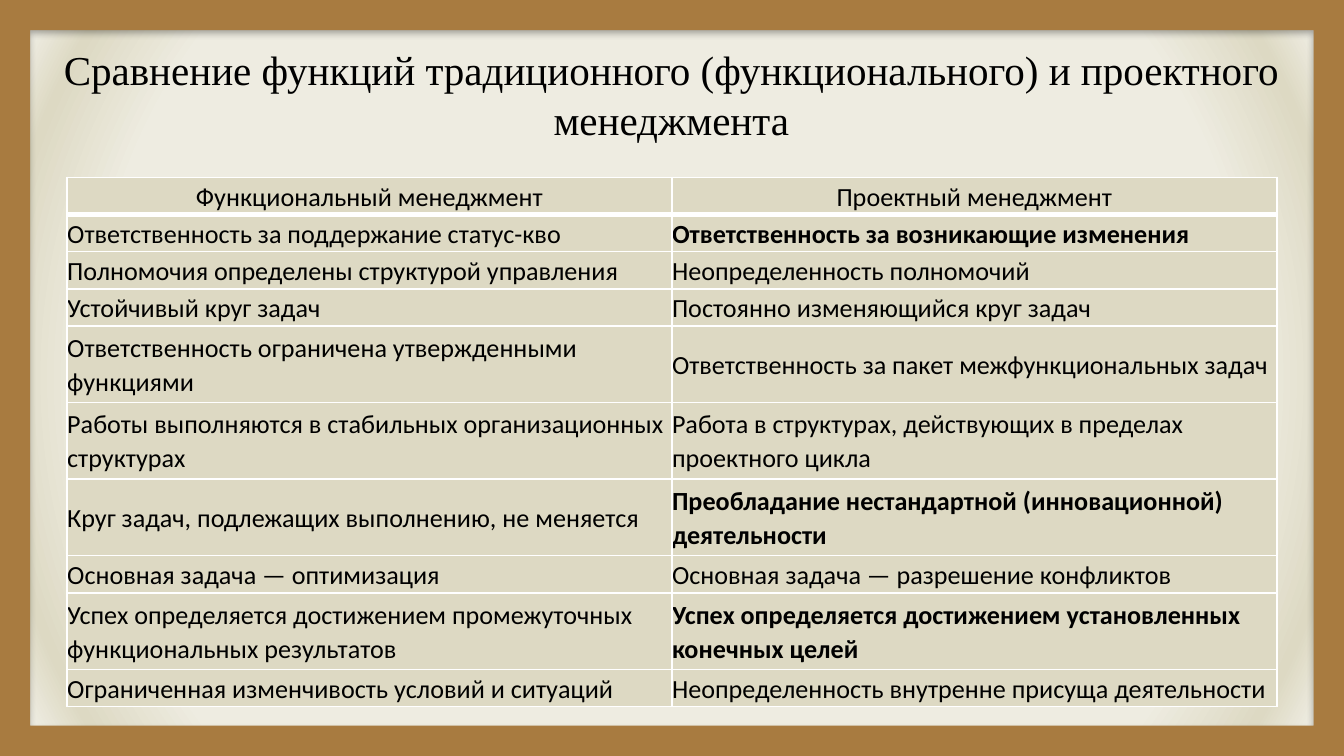
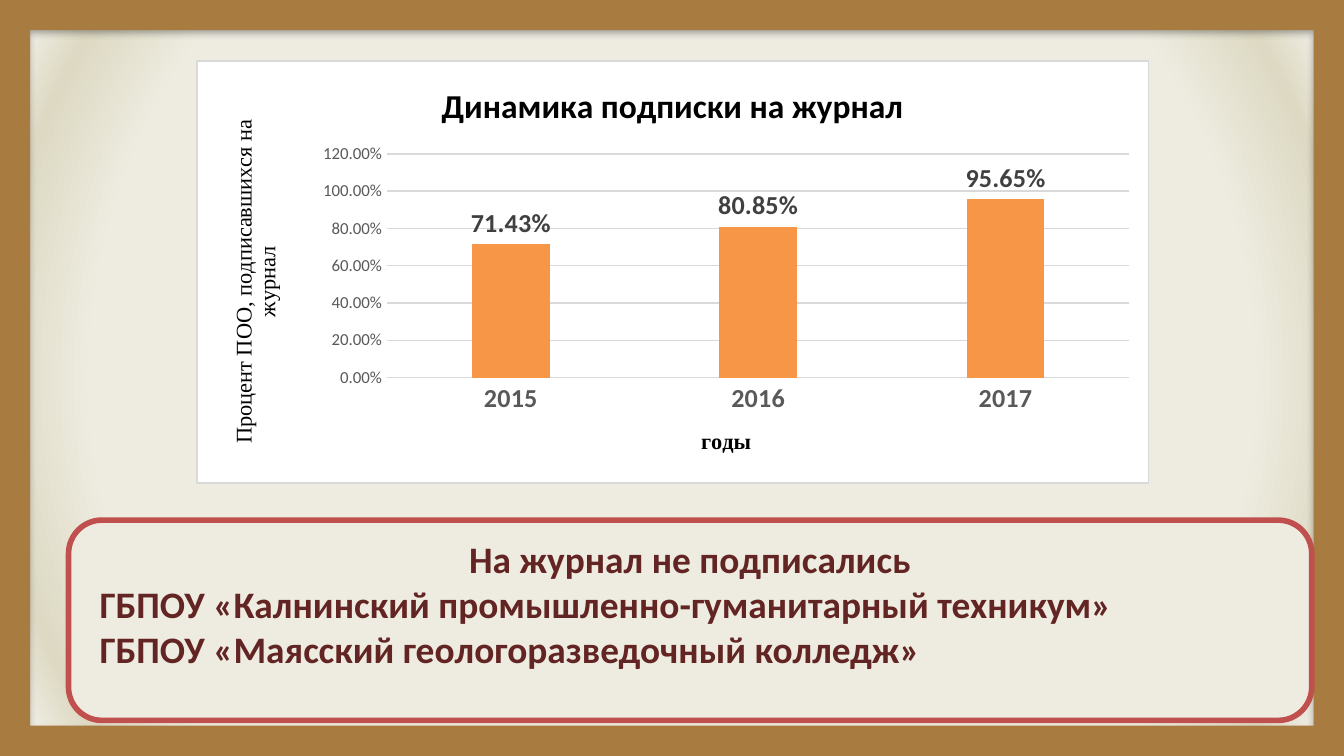
from dataclasses import dataclass

from pptx import Presentation
from pptx.chart.data import CategoryChartData
from pptx.dml.color import RGBColor
from pptx.enum.chart import XL_CHART_TYPE, XL_LABEL_POSITION, XL_TICK_MARK
from pptx.enum.shapes import MSO_SHAPE
from pptx.enum.text import MSO_ANCHOR, PP_ALIGN
from pptx.oxml import parse_xml
from pptx.oxml.ns import nsdecls
from pptx.util import Inches, Pt

CENTER, LEFT, JUST = PP_ALIGN.CENTER, PP_ALIGN.LEFT, PP_ALIGN.JUSTIFY
MIDDLE, TOP = MSO_ANCHOR.MIDDLE, MSO_ANCHOR.TOP
FRAME, ROUND = MSO_SHAPE.FRAME, MSO_SHAPE.ROUNDED_RECTANGLE
COLUMN, OUTER = XL_CHART_TYPE.COLUMN_CLUSTERED, XL_LABEL_POSITION.OUTSIDE_END
NONE = XL_TICK_MARK.NONE
WIDE = 10
HIGH = WIDE * 9 / 16


@dataclass(frozen=True)
class Theme:
    ink: str = "000000"
    paper: str = "EEECE1"
    sand: str = "DDD9C3"
    white: str = "FFFFFF"
    wood: str = "A87B40"
    bar: str = "F79646"
    grid: str = "D9D9D9"
    tick: str = "595959"
    label: str = "404040"
    red: str = "C0504D"
    wine: str = "632523"
    sans: str = "Calibri"
    serif: str = "Times New Roman"
    title: int = 22
    note: int = 20
    head: int = 18
    body: int = 14
    axis: int = 12
    base: int = 10
    small: int = 9


T = Theme()

ROWS = [
    ("Функциональный менеджмент", "Проектный менеджмент"),
    ("Ответственность за поддержание статус-кво",
     "Ответственность за возникающие изменения"),
    ("Полномочия определены структурой управления",
     "Неопределенность полномочий"),
    ("Устойчивый круг задач", "Постоянно изменяющийся круг задач"),
    ("Ответственность ограничена утвержденными функциями",
     "Ответственность за пакет межфункциональных задач"),
    ("Работы выполняются в стабильных организационных структурах",
     "Работа в структурах, действующих в пределах проектного цикла"),
    ("Круг задач, подлежащих выполнению, не меняется",
     "Преобладание нестандартной (инновационной) деятельности"),
    ("Основная задача — оптимизация",
     "Основная задача — разрешение конфликтов"),
    ("Успех определяется достижением промежуточных функциональных результатов",
     "Успех определяется достижением установленных конечных целей"),
    ("Ограниченная изменчивость условий и ситуаций",
     "Неопределенность внутренне присуща деятельности"),
]
TALL = {4, 5, 6, 8}    # rows with two lines
STRONG = {1, 6, 8}     # rows with a bold right cell


# Helpers
def put(item, **values):
    for name, value in values.items():
        setattr(item, name, value)


def ink(font, size, color=T.ink, name=T.sans, bold=False):
    put(font, size=Pt(size), name=name, bold=bold)
    font.color.rgb = RGBColor.from_string(color)


def paint(fill, color):
    fill.solid()
    fill.fore_color.rgb = RGBColor.from_string(color)


def stroke(line, color, width):
    paint(line.fill, color)
    line.width = Pt(width)


def place(box):
    return [Inches(n) for n in box]


def write(para, text, size, align=LEFT, **look):
    para.alignment = align
    run = para.add_run()
    run.text = text
    ink(run.font, size, **look)


# Shared background and wooden frame
def base(deck):
    slide = deck.slides.add_slide(deck.slide_layouts[6])
    stops = "".join(
        f'<a:gs pos="{pos}000"><a:srgbClr val="{color}"/></a:gs>'
        for pos, color in ((75, T.paper), (88, T.sand), (100, T.white)))
    slide.element.cSld.insert(0, parse_xml(
        f'<p:bg {nsdecls("p", "a")}><p:bgPr><a:gradFill rotWithShape="1">'
        f'<a:gsLst>{stops}</a:gsLst><a:path path="circle">'
        '<a:fillToRect l="50000" t="50000" r="50000" b="50000"/></a:path>'
        '</a:gradFill><a:effectLst/></p:bgPr></p:bg>'))
    return slide


def frame(slide, box):
    wood = slide.shapes.add_shape(FRAME, *place(box))
    wood.adjustments[0] = 0.04
    paint(wood.fill, T.wood)
    wood.line.fill.background()
    wood.element.spPr.append(parse_xml(
        f'<a:effectLst {nsdecls("a")}><a:outerShdw blurRad="{Pt(3.5)}" '
        f'dist="{Pt(2.2)}" dir="5400000" rotWithShape="0">'
        f'<a:srgbClr val="{T.ink}"><a:alpha val="32000"/></a:srgbClr>'
        '</a:outerShdw></a:effectLst>'))


# Title
def heading(slide, box, text):
    area = slide.shapes.add_textbox(*place(box)).text_frame
    put(area, word_wrap=True, vertical_anchor=MIDDLE)
    write(area.paragraphs[0], text, T.title, CENTER, name=T.serif)


# Table of two columns
def edges(cell, top, bottom):
    props = cell._tc.get_or_add_tcPr()
    sides = {"L": 1, "R": 1, "T": top, "B": bottom}
    for spot, (side, width) in enumerate(sides.items()):
        props.insert(spot, parse_xml(
            f'<a:ln{side} {nsdecls("a")} w="{Pt(width)}"><a:solidFill>'
            f'<a:srgbClr val="{T.white}"/></a:solidFill></a:ln{side}>'))


def grid(slide, box, rows):
    table = slide.shapes.add_table(len(rows), 2, *place(box)).table
    for col in table.columns:
        col.width = Inches(box[2] / 2)
    tall = 0.57
    low = (box[3] - tall * len(TALL)) / (len(rows) - len(TALL))
    for r, texts in enumerate(rows):
        table.rows[r].height = Inches(tall if r in TALL else low)
        for c, text in enumerate(texts):
            cell = table.cell(r, c)
            put(cell, margin_left=0, margin_right=0, margin_top=0,
                margin_bottom=0, vertical_anchor=MIDDLE)
            paint(cell.fill, T.sand)
            edges(cell, 3 if r == 1 else 1, 3 if r == 0 else 1)
            para = cell.text_frame.paragraphs[0]
            para.line_spacing = 1.07
            write(para, text, T.body, LEFT if r else CENTER,
                  bold=c == 1 and r in STRONG)


# Column chart
def caption(owner, text, size, **look):
    write(owner.text_frame.paragraphs[0], text, size, CENTER, **look)


def settle(part, spot, **values):
    for old in part.xpath("c:layout"):
        part.remove(old)
    marks = "".join(f'<c:{key} val="{value}"/>'
                    for key, value in values.items())
    part.insert(spot, parse_xml(
        f'<c:layout {nsdecls("c")}><c:manualLayout>{marks}'
        '</c:manualLayout></c:layout>'))


def graph(slide, box):
    data = CategoryChartData(number_format="0.00%")
    data.categories = ["2015", "2016", "2017"]
    data.add_series("Series 1", (0.7143, 0.8085, 0.9565))
    chart = slide.shapes.add_chart(COLUMN, *place(box), data).chart
    put(chart, has_legend=False, has_title=True)
    ink(chart.font, T.base)
    caption(chart.chart_title, "Динамика подписки на журнал", T.head, bold=True)

    # Axes
    cat, val = chart.category_axis, chart.value_axis
    for axis in (cat, val):
        put(axis, major_tick_mark=NONE, minor_tick_mark=NONE, has_title=True)
    ink(cat.tick_labels.font, T.body, T.tick, bold=True)
    ink(val.tick_labels.font, T.small, T.tick)
    caption(cat.axis_title, "годы", T.axis, name=T.serif, bold=True)
    caption(val.axis_title, "Процент ПОО, подписавшихся на журнал",
            T.axis, name=T.serif)
    stroke(cat.format.line, T.grid, 0.75)
    val.format.line.fill.background()
    stroke(val.major_gridlines.format.line, T.grid, 0.75)
    put(val, minimum_scale=0, maximum_scale=1.2, major_unit=0.2)
    put(val.tick_labels, number_format="0.00%", number_format_is_linked=False)

    # Columns and labels
    plot = chart.plots[0]
    put(plot, gap_width=219, overlap=-27, vary_by_categories=False,
        has_data_labels=True)
    paint(plot.series[0].format.fill, T.bar)
    put(plot.data_labels, show_value=True, position=OUTER,
        number_format="0.00%", number_format_is_linked=False)
    ink(plot.data_labels.font, T.body, T.label, bold=True)

    # Plot area, value title and card behind them
    space = chart.element
    edge = {"xMode": "edge", "yMode": "edge"}
    settle(space.chart.plotArea, 0, layoutTarget="inner", **edge,
           x=0.2, y=0.22, w=0.78, h=0.53)
    settle(val.axis_title.format.element if hasattr(val.axis_title.format, "element")
           else space.xpath(".//c:valAx/c:title")[0], 1, **edge, x=0.03, y=0.13)
    space.xpath("c:txPr")[0].addprevious(parse_xml(
        f'<c:spPr {nsdecls("c", "a")}><a:solidFill><a:srgbClr val="{T.white}"/>'
        f'</a:solidFill><a:ln w="{Pt(0.75)}"><a:solidFill>'
        f'<a:srgbClr val="{T.grid}"/></a:solidFill></a:ln></c:spPr>'))


# Rounded note
def note(slide, box, head, lines):
    card = slide.shapes.add_shape(ROUND, *place(box))
    card.shadow.inherit = False
    paint(card.fill, T.paper)
    stroke(card.line, T.red, 3)
    area = card.text_frame
    put(area, word_wrap=True, vertical_anchor=TOP)
    look = {"color": T.wine, "bold": True}
    write(area.paragraphs[0], head, T.note, CENTER, **look)
    for line in lines:
        para = area.add_paragraph()
        write(para, line, T.note, JUST, **look)
        para._p.get_or_add_pPr().set("marL", str(Inches(0.06)))


# Slides
def compare(deck):
    slide = base(deck)
    heading(slide, (0.35, 0.23, 9.29, 0.94),
            "Сравнение функций традиционного (функционального) "
            "и проектного менеджмента")
    grid(slide, (0.5, 1.32, 9, 3.94), ROWS)
    frame(slide, (0, 0, WIDE, HIGH))


def journal(deck):
    slide = base(deck)
    frame(slide, (0, 0, WIDE, HIGH))
    graph(slide, (1.46, 0.45, 7.09, 3.15))
    note(slide, (0.51, 3.87, 9.25, 1.49), "На журнал не подписались", [
        "ГБПОУ «Калнинский промышленно-гуманитарный техникум»",
        "ГБПОУ «Маясский геологоразведочный колледж»"])


def main():
    deck = Presentation()
    put(deck, slide_width=Inches(WIDE), slide_height=Inches(HIGH))
    compare(deck)
    journal(deck)
    deck.save("out.pptx")


if __name__ == "__main__":
    main()
